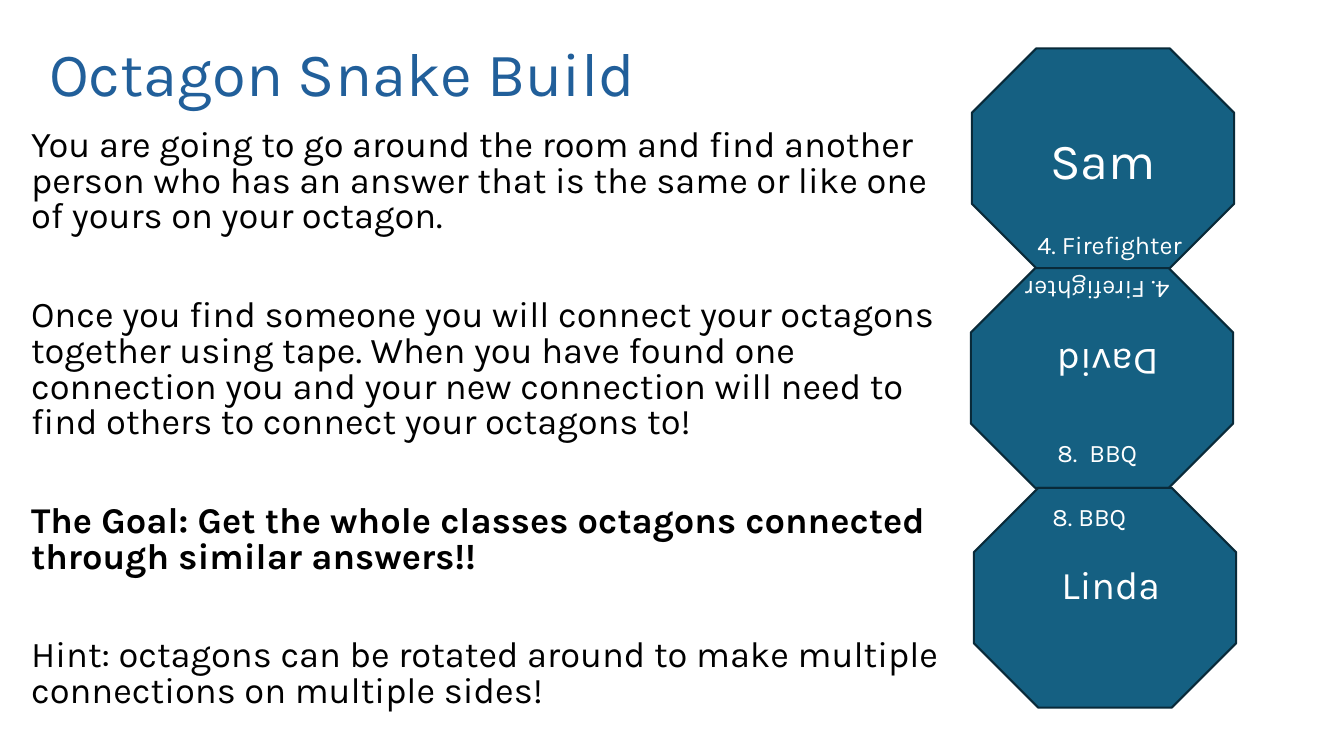
from dataclasses import dataclass

from pptx import Presentation
from pptx.dml.color import RGBColor
from pptx.enum.shapes import MSO_SHAPE
from pptx.enum.text import MSO_ANCHOR
from pptx.slide import Slide
from pptx.util import Emu, Pt

OCTAGON = MSO_SHAPE.OCTAGON
TOP = MSO_ANCHOR.TOP
MIDDLE = MSO_ANCHOR.MIDDLE

PX = 9144
FONT = "Karla"
COLORS = {
    "title": "215F9A",
    "body": "000000",
    "label": "FFFFFF",
    "fill": "156082",
    "edge": "092A39",
}


@dataclass
class Para:
    text: str
    bold: bool = False
    before: float = 0
    lines: float = 1


@dataclass
class Block:
    left: int
    top: int
    width: int
    height: int
    size: float
    paras: list[Para]
    color: str = "label"
    turn: int = 0
    anchor: MSO_ANCHOR = TOP


def px(count: int) -> Emu:
    return Emu(count * PX)


def rgb(name: str) -> RGBColor:
    return RGBColor.from_string(COLORS[name])


def add_block(slide: Slide, block: Block) -> None:
    box = slide.shapes.add_textbox(
        px(block.left), px(block.top), px(block.width), px(block.height)
    )
    box.rotation = block.turn
    frame = box.text_frame
    frame.word_wrap = True
    frame.vertical_anchor = block.anchor
    for index, para in enumerate(block.paras):
        line = frame.add_paragraph() if index else frame.paragraphs[0]
        line.line_spacing = para.lines
        line.space_before = Pt(para.before)
        run = line.add_run()
        run.text = para.text
        run.font.name = FONT
        run.font.size = Pt(block.size)
        run.font.bold = para.bold
        run.font.color.rgb = rgb(block.color)


def add_octagon(slide: Slide, left: int, top: int) -> None:
    shape = slide.shapes.add_shape(OCTAGON, px(left), px(top), px(WIDTH), px(HEIGHT))
    shape.shadow.inherit = False
    shape.fill.solid()
    shape.fill.fore_color.rgb = rgb("fill")
    shape.line.color.rgb = rgb("edge")
    shape.line.width = Pt(1.5)


WIDTH, HEIGHT = 260, 218
FIRST = 48
LEFTS = [964, 963, 966]
GAP, TIGHT = 45, 0.82

STEPS = [
    Para(
        "You are going to go around the room and find another person who has "
        "an answer that is the same or like one of yours on your octagon.",
        lines=TIGHT,
    ),
    Para(
        "Once you find someone you will connect your octagons together using "
        "tape. When you have found one connection you and your new connection "
        "will need to find others to connect your octagons to!",
        before=GAP,
        lines=TIGHT,
    ),
    Para(
        "The Goal: Get the whole classes octagons connected through similar "
        "answers!!",
        bold=True,
        before=GAP,
        lines=TIGHT,
    ),
    Para(
        "Hint: octagons can be rotated around to make multiple connections on "
        "multiple sides!",
        before=GAP,
        lines=TIGHT,
    ),
]

BLOCKS = [
    Block(39, 3, 1150, 145, 44, [Para("Octagon Snake Build", lines=0.9)],
          "title", anchor=MIDDLE),
    Block(21, 123, 925, 593, 25.9, STEPS, "body"),
    Block(1019, 223, 171, 35, 18, [Para("4. Firefighter")]),
    Block(999, 274, 171, 35, 18, [Para("4. Firefighter")], turn=180),
    Block(1032, 123, 138, 61, 36, [Para("Sam")]),
    Block(1032, 341, 127, 50, 28, [Para("David")], turn=180),
    Block(1039, 429, 104, 35, 18, [Para("8.  BBQ")]),
    Block(1034, 492, 104, 40, 18, [Para("8. BBQ")]),
    Block(1043, 551, 127, 57, 28, [Para("Linda")]),
]


def main() -> None:
    deck = Presentation()
    deck.slide_width = px(1333)
    deck.slide_height = px(750)
    slide = deck.slides.add_slide(deck.slide_layouts[6])
    for index, left in enumerate(LEFTS):
        add_octagon(slide, left, FIRST + index * HEIGHT)
    for block in BLOCKS:
        add_block(slide, block)
    deck.save("out.pptx")


if __name__ == "__main__":
    main()
